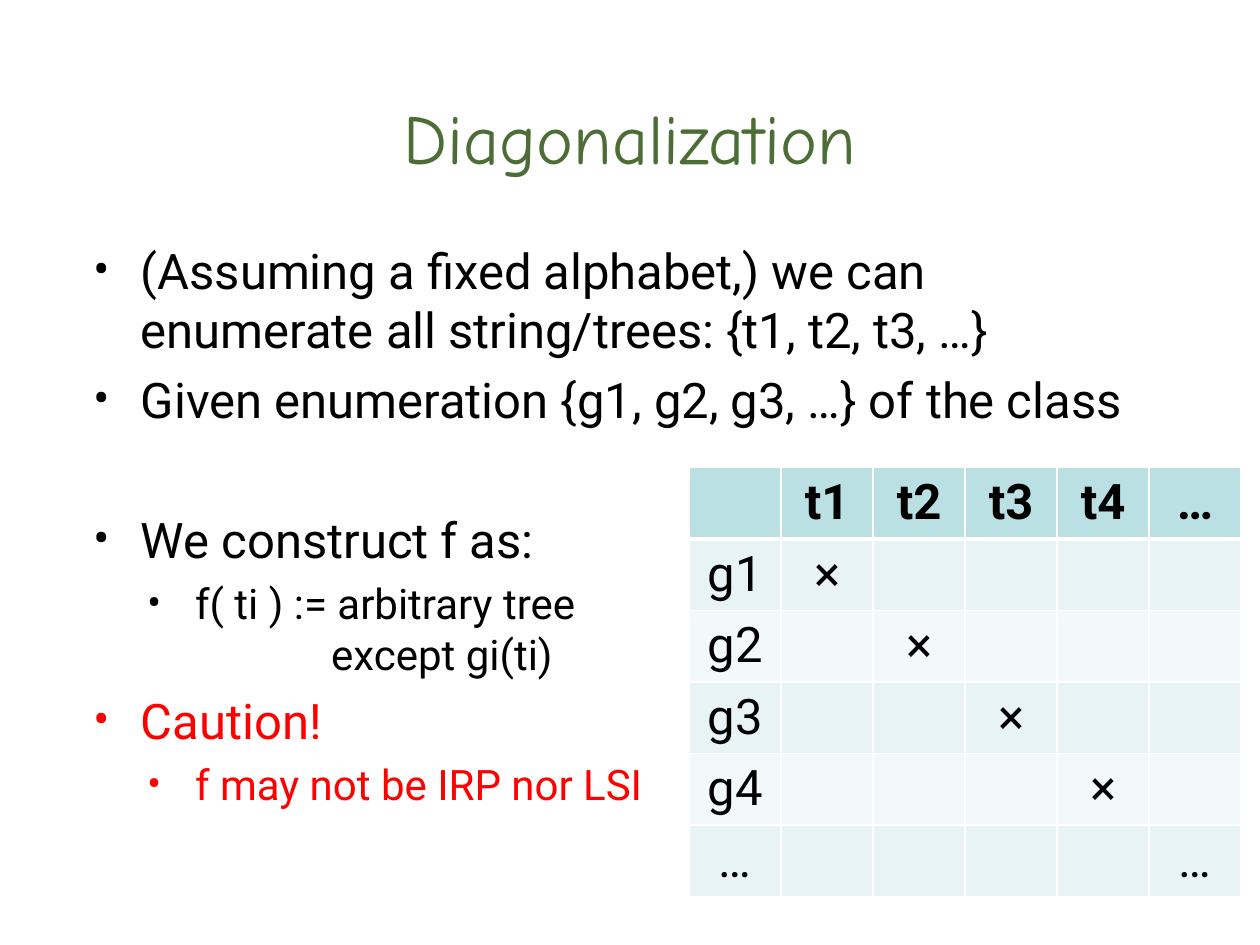
from dataclasses import dataclass
from typing import Optional

import pptx
import pptx.dml.color
import pptx.enum.text
import pptx.oxml
import pptx.oxml.ns
import pptx.util
from lxml import etree

GRID_COLUMNS, GRID_ROWS = 100, 75
SLIDE_SIZE = {"slide_width": pptx.util.Inches(10), "slide_height": pptx.util.Inches(7.5)}
CENTER = pptx.enum.text.PP_ALIGN.CENTER
LEFT = pptx.enum.text.PP_ALIGN.LEFT
TOP = pptx.enum.text.MSO_ANCHOR.TOP
MIDDLE = pptx.enum.text.MSO_ANCHOR.MIDDLE


@dataclass(frozen=True)
class Theme:
    title_font: str = "Comic Neue"
    body_font: str = "Roboto"
    title_size: int = 40
    main_size: int = 28
    detail_size: int = 24
    title: str = "4C6D35"
    ink: str = "000000"
    caution: str = "FF0000"
    header: str = "BBE0E3"
    odd_row: str = "E7F3F4"
    even_row: str = "F3F9FA"
    rule: str = "FFFFFF"
    thin: int = 1
    thick: int = 3


@dataclass(frozen=True)
class Frame:
    column: float
    row: float
    columns: float
    rows: float


@dataclass(frozen=True)
class Level:
    margin: float
    size: int
    space: float
    bullet: Optional[str] = "•"
    hanging: float = 3.8


@dataclass(frozen=True)
class Point:
    text: str
    level: Level
    color: str
    space: Optional[float] = None


THEME = Theme()
MAIN = Level(3.8, THEME.main_size, 6.6)
DETAIL = Level(8.1, THEME.detail_size, 5.6)
CONTINUED = Level(18.9, THEME.detail_size, 0, None, 0)

TITLE_FRAME = Frame(6.4, 5.4, 87.2, 10.9)
BODY_FRAME = Frame(6.4, 18.6, 87.2, 48.4)
MATRIX_FRAME = Frame(54.7, 37.1, 43.8, 33.2)

POINTS = [
    Point("(Assuming a fixed alphabet,) we can enumerate all string/trees: {t1, t2, t3, …}",
          MAIN, THEME.ink, 0),
    Point("Given enumeration {g1, g2, g3, …} of the class", MAIN, THEME.ink),
    Point("We construct f as:", MAIN, THEME.ink, 46),
    Point("f( ti ) := arbitrary tree", DETAIL, THEME.ink),
    Point("except gi(ti)", CONTINUED, THEME.ink),
    Point("Caution!", MAIN, THEME.caution),
    Point("f may not be IRP nor LSI", DETAIL, THEME.caution),
]
TREES = ["t1", "t2", "t3", "t4", "…"]
FUNCTIONS = ["g1", "g2", "g3", "g4", "…"]
DIAGONAL = ["×", "×", "×", "×", "…"]


def across(columns: float) -> int:
    return round(SLIDE_SIZE["slide_width"] * columns / GRID_COLUMNS)


def down(rows: float) -> int:
    return round(SLIDE_SIZE["slide_height"] * rows / GRID_ROWS)


def bounds(frame: Frame) -> dict:
    return {"left": across(frame.column), "top": down(frame.row),
            "width": across(frame.columns), "height": down(frame.rows)}


def apply(target, values: dict) -> None:
    for name, value in values.items():
        setattr(target, name, value)


def format_font(font, name: str, size: int, color: str, bold: bool = False) -> None:
    apply(font, {"name": name, "size": pptx.util.Pt(size), "bold": bold})
    font.color.rgb = pptx.dml.color.RGBColor.from_string(color)


def draw_title(slide, text: str) -> None:
    heading = slide.shapes.title
    apply(heading, bounds(TITLE_FRAME))
    apply(heading.text_frame, {"text": text, "vertical_anchor": MIDDLE, "word_wrap": True})
    paragraph = heading.text_frame.paragraphs[0]
    paragraph.alignment = CENTER
    format_font(paragraph.runs[0].font, THEME.title_font, THEME.title_size, THEME.title)


def indent(paragraph, level: Level) -> None:
    properties = paragraph._p.get_or_add_pPr()
    properties.set("marL", str(across(level.margin)))
    properties.set("indent", str(-across(level.hanging)))
    if level.bullet:
        font = etree.SubElement(properties, pptx.oxml.ns.qn("a:buFont"))
        font.set("typeface", THEME.body_font)
        mark = etree.SubElement(properties, pptx.oxml.ns.qn("a:buChar"))
        mark.set("char", level.bullet)
    else:
        etree.SubElement(properties, pptx.oxml.ns.qn("a:buNone"))


def draw_points(slide, points: list[Point]) -> None:
    body = slide.shapes.add_textbox(**bounds(BODY_FRAME)).text_frame
    apply(body, {"word_wrap": True, "vertical_anchor": TOP})
    for index, point in enumerate(points):
        paragraph = body.add_paragraph() if index else body.paragraphs[0]
        indent(paragraph, point.level)
        space = point.level.space if point.space is None else point.space
        apply(paragraph, {"alignment": LEFT, "space_before": pptx.util.Pt(space)})
        run = paragraph.add_run()
        run.text = point.text
        format_font(run.font, THEME.body_font, point.level.size, point.color)


def rule_cell(cell, widths: dict[str, int]) -> None:
    properties = cell._tc.get_or_add_tcPr()
    for position, (side, width) in enumerate(widths.items()):
        line = pptx.oxml.parse_xml(
            f'<a:{side} {pptx.oxml.ns.nsdecls("a")} w="{pptx.util.Pt(width)}">'
            f'<a:solidFill><a:srgbClr val="{THEME.rule}"/></a:solidFill></a:{side}>')
        properties.insert(position, line)


def draw_cell(cell, text: str, row: int) -> None:
    banding = THEME.odd_row if row % 2 else THEME.even_row
    cell.fill.solid()
    cell.fill.fore_color.rgb = pptx.dml.color.RGBColor.from_string(
        banding if row else THEME.header)
    rule_cell(cell, {"lnL": THEME.thin, "lnR": THEME.thin,
                     "lnT": THEME.thick if row == 1 else THEME.thin,
                     "lnB": THEME.thin if row else THEME.thick})
    cell.vertical_anchor = MIDDLE
    if text:
        paragraph = cell.text_frame.paragraphs[0]
        paragraph.alignment = CENTER
        run = paragraph.add_run()
        run.text = text
        format_font(run.font, THEME.body_font, THEME.main_size, THEME.ink, row == 0)


def draw_matrix(slide) -> None:
    entries = [["", *TREES]]
    for index, function in enumerate(FUNCTIONS):
        values = [""] * len(TREES)
        values[index] = DIAGONAL[index]
        entries.append([function, *values])
    matrix = slide.shapes.add_table(
        len(entries), len(entries[0]), **bounds(MATRIX_FRAME)).table
    for row, values in enumerate(entries):
        for column, text in enumerate(values):
            draw_cell(matrix.cell(row, column), text, row)


def main() -> None:
    deck = pptx.Presentation()
    apply(deck, SLIDE_SIZE)
    slide = deck.slides.add_slide(deck.slide_layouts.get_by_name("Title Only"))
    draw_title(slide, "Diagonalization")
    draw_points(slide, POINTS)
    draw_matrix(slide)
    deck.save("out.pptx")


if __name__ == "__main__":
    main()
